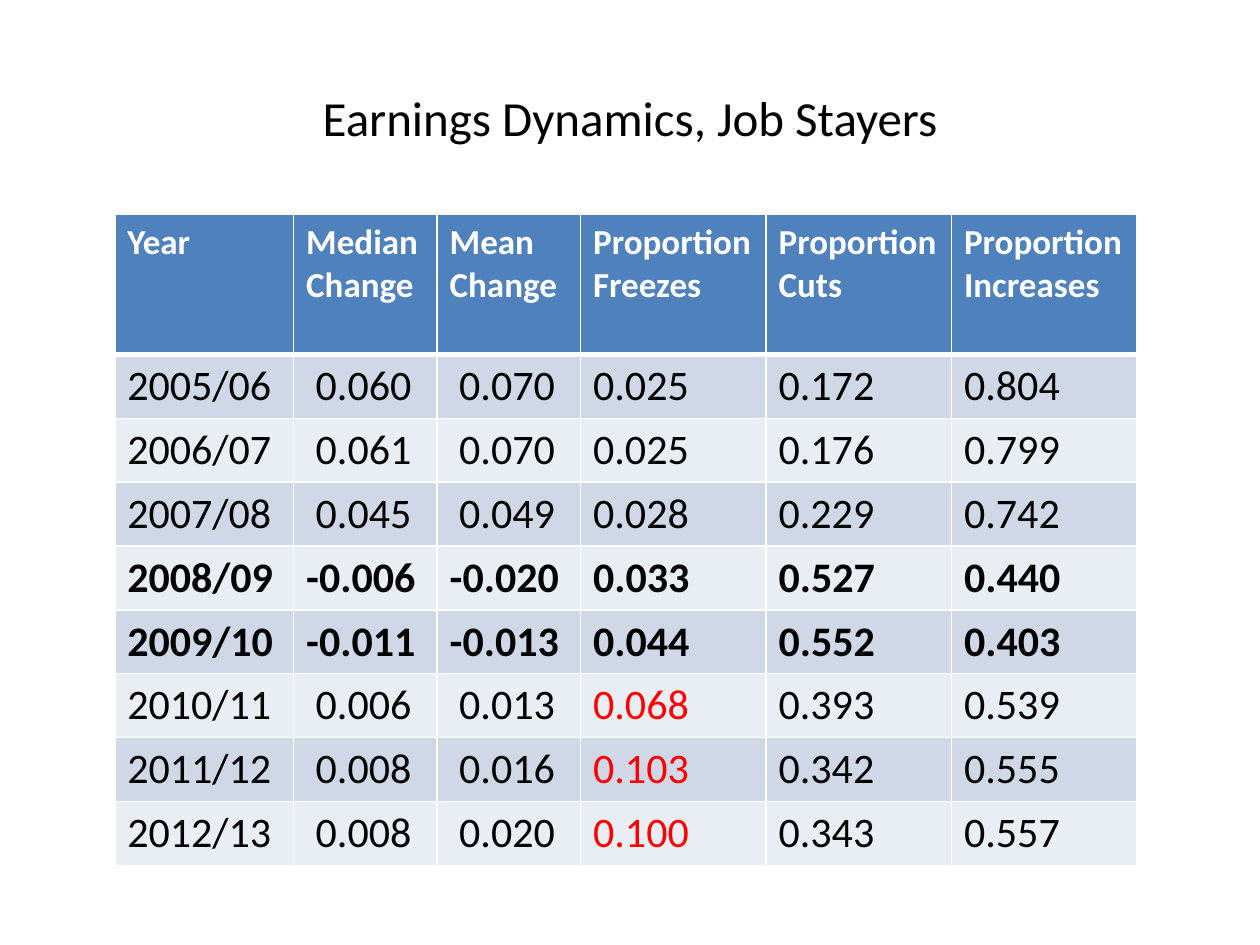
from pptx import Presentation
from pptx.dml.color import RGBColor
from pptx.enum.text import MSO_ANCHOR, PP_ALIGN
from pptx.oxml import parse_xml
from pptx.oxml.ns import nsdecls
from pptx.util import Pt

FONT = "Calibri"
BLACK = RGBColor(0x00, 0x00, 0x00)
WHITE = RGBColor(0xFF, 0xFF, 0xFF)
RED = RGBColor(0xFF, 0x00, 0x00)
HEADER_BLUE = RGBColor(0x4F, 0x81, 0xBD)
BANDS = [RGBColor(0xE9, 0xED, 0xF4), RGBColor(0xD0, 0xD8, 0xE8)]

COLUMN_WIDTHS = [102.2, 82, 82, 106, 106, 106]
HEADER_HEIGHT = 80
ROW_HEIGHT = 36.5
ROWS = [
    ["Year", "Median Change", "Mean Change",
     "Proportion Freezes", "Proportion Cuts", "Proportion Increases"],
    ["2005/06", " 0.060", " 0.070", "0.025", "0.172", "0.804"],
    ["2006/07", " 0.061", " 0.070", "0.025", "0.176", "0.799"],
    ["2007/08", " 0.045", " 0.049", "0.028", "0.229", "0.742"],
    ["2008/09", "-0.006", "-0.020", "0.033", "0.527", "0.440"],
    ["2009/10", "-0.011", "-0.013", "0.044", "0.552", "0.403"],
    ["2010/11", " 0.006", " 0.013", "0.068", "0.393", "0.539"],
    ["2011/12", " 0.008", " 0.016", "0.103", "0.342", "0.555"],
    ["2012/13", " 0.008", " 0.020", "0.100", "0.343", "0.557"],
]
BOLD_YEARS = {"2008/09", "2009/10"}
RED_YEARS = {"2010/11", "2011/12", "2012/13"}
FREEZES_COLUMN = 3


def style_text(paragraph, size, color, bold=False):
    font = paragraph.font
    font.name = FONT
    font.size = Pt(size)
    font.bold = bold
    font.color.rgb = color


def add_borders(cell, bottom_width):
    properties = cell._tc.get_or_add_tcPr()
    widths = {"lnL": 1, "lnR": 1, "lnT": 1, "lnB": bottom_width}
    for position, (side, width) in enumerate(widths.items()):
        properties.insert(position, parse_xml(
            f'<a:{side} {nsdecls("a")} w="{Pt(width)}"><a:solidFill>'
            f'<a:srgbClr val="{WHITE}"/></a:solidFill></a:{side}>'))


presentation = Presentation()
presentation.slide_width = Pt(720)
presentation.slide_height = Pt(540)
slide = presentation.slides.add_slide(presentation.slide_layouts[6])

# Title
title = slide.shapes.add_textbox(Pt(36), Pt(21.6), Pt(648), Pt(90))
title.text_frame.word_wrap = True
title.text_frame.vertical_anchor = MSO_ANCHOR.MIDDLE
paragraph = title.text_frame.paragraphs[0]
paragraph.text = "Earnings Dynamics, Job Stayers"
paragraph.alignment = PP_ALIGN.CENTER
style_text(paragraph, 28, BLACK)

# Table grid
table_height = HEADER_HEIGHT + ROW_HEIGHT * (len(ROWS) - 1)
table = slide.shapes.add_table(
    len(ROWS), len(COLUMN_WIDTHS), Pt(65.6), Pt(122.6),
    Pt(sum(COLUMN_WIDTHS)), Pt(table_height)).table
for column, width in zip(table.columns, COLUMN_WIDTHS):
    column.width = Pt(width)

# Table cells
for row_index, values in enumerate(ROWS):
    is_header = row_index == 0
    year = values[0]
    table.rows[row_index].height = Pt(HEADER_HEIGHT if is_header else ROW_HEIGHT)
    for column_index, value in enumerate(values):
        cell = table.cell(row_index, column_index)
        cell.text = value
        cell.fill.solid()
        cell.fill.fore_color.rgb = HEADER_BLUE if is_header else BANDS[row_index % 2]
        add_borders(cell, 3 if is_header else 1)
        paragraph = cell.text_frame.paragraphs[0]
        if is_header:
            style_text(paragraph, 20, WHITE, bold=True)
        else:
            is_red = column_index == FREEZES_COLUMN and year in RED_YEARS
            style_text(paragraph, 24, RED if is_red else BLACK, year in BOLD_YEARS)

presentation.save("out.pptx")
